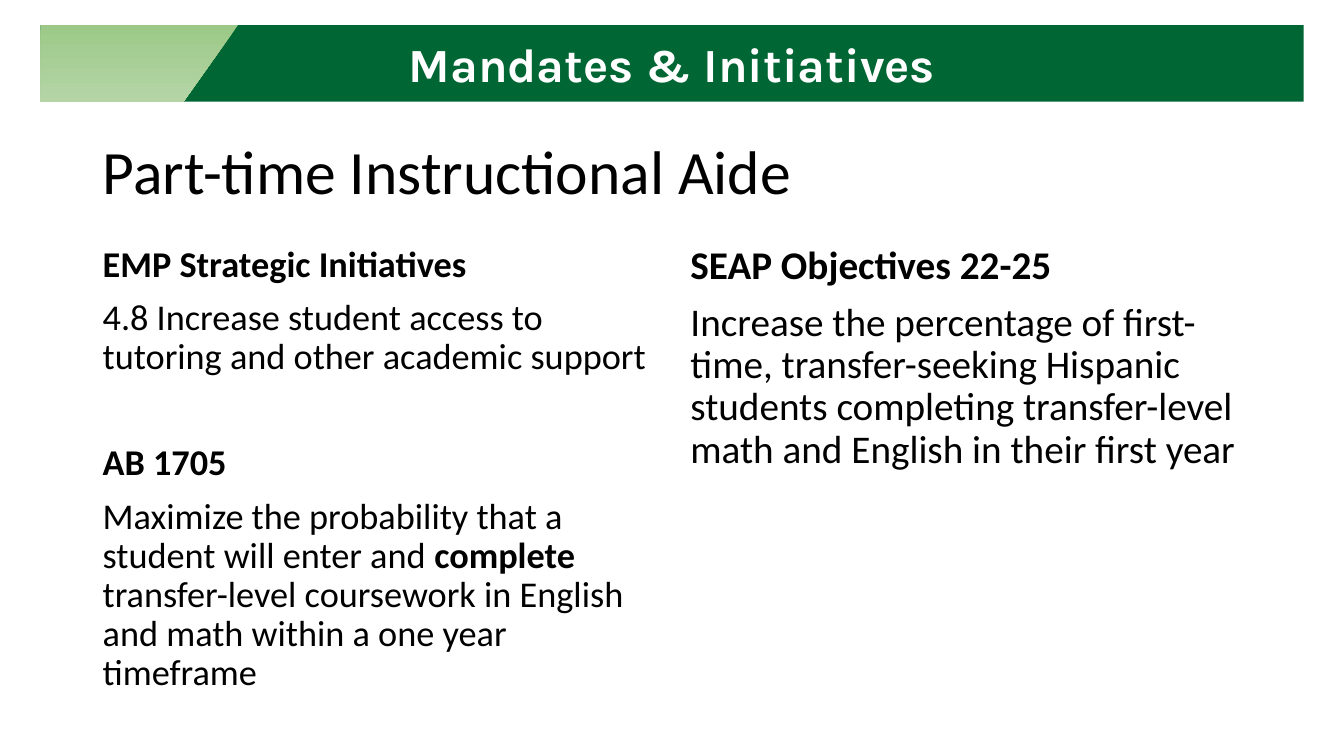
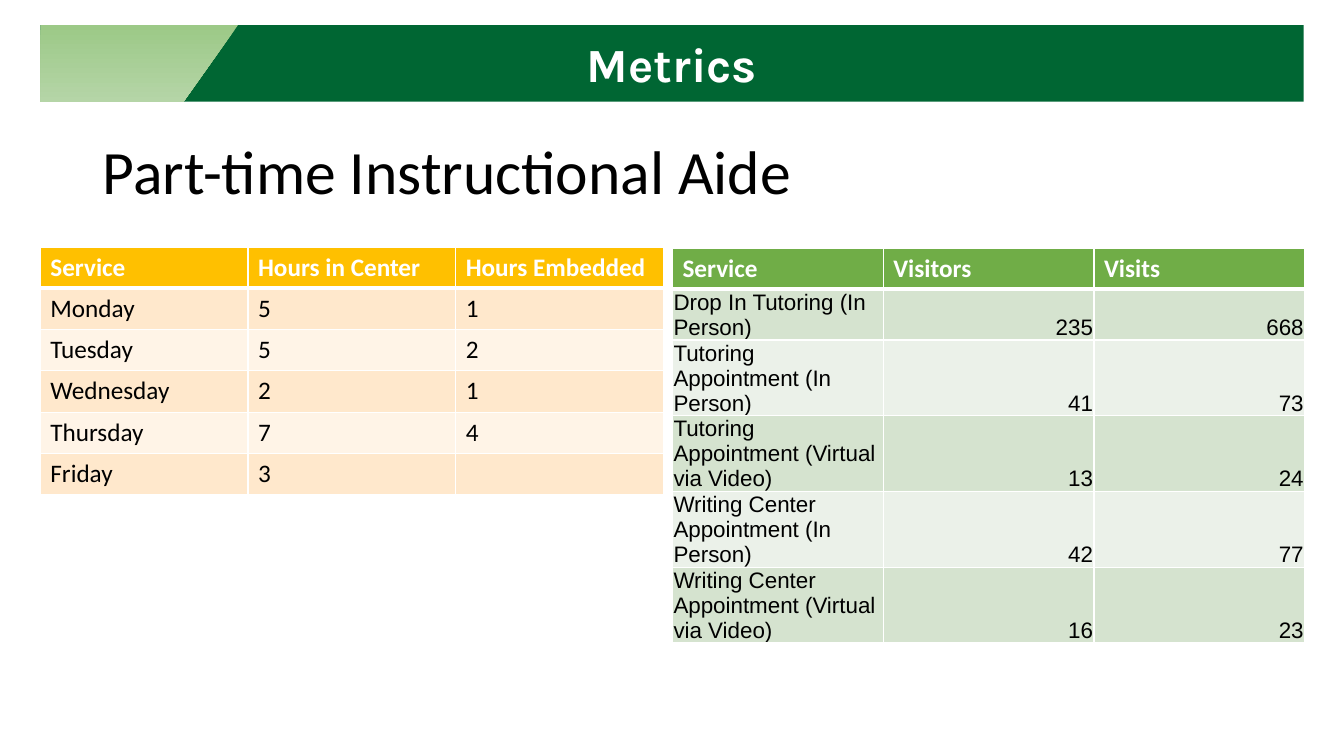
from lxml.etree import SubElement
from pptx import Presentation
from pptx.dml.color import RGBColor
from pptx.enum.shapes import MSO_SHAPE as Preset
from pptx.enum.text import MSO_ANCHOR as Anchor, MSO_AUTO_SIZE as AutoSize, PP_ALIGN as Align
from pptx.oxml.ns import qn
from pptx.util import Emu, Pt

WHITE = RGBColor(0xFF, 0xFF, 0xFF)
BLACK = RGBColor(0x00, 0x00, 0x00)
GREEN = RGBColor(0x00, 0x66, 0x33)
ACCENT_TOP = RGBColor(0x9C, 0xC9, 0x87)
ACCENT_BOTTOM = RGBColor(0xB5, 0xD5, 0xA7)
AMBER_HEAD = RGBColor(0xFF, 0xC0, 0x00)
AMBER_BANDS = RGBColor(0xFF, 0xE8, 0xCC), RGBColor(0xFF, 0xF4, 0xE7)
LEAF_HEAD = RGBColor(0x70, 0xAD, 0x47)
LEAF_BANDS = RGBColor(0xD5, 0xE3, 0xCF), RGBColor(0xEB, 0xF1, 0xE9)


def px(length):
    return Emu(length * 9144)


class Deck:
    """Holds the shared style and the slide being built."""

    BODY_FONT, BAND_FONT, DATA_FONT = "Calibri", "Karla", "Arial"
    LEFT, BAND_TOP, BAND_WIDTH, BAND_HEIGHT = 40, 25, 1253, 76

    def __init__(self):
        self.deck = Presentation()
        self.deck.slide_width, self.deck.slide_height = px(1333), px(750)
        self.slide = None

    def add_run(self, paragraph, text, size, color=BLACK, bold=False, font=BODY_FONT):
        run = paragraph.add_run()
        run.text = text
        run.font.name, run.font.size, run.font.bold = font, Pt(size), bold
        run.font.color.rgb = color

    def start(self, heading, title):
        self.slide = self.deck.slides.add_slide(self.deck.slide_layouts[5])
        self.title(title)
        self.band(heading)
        self.accent()

    def title(self, text):
        holder = self.slide.shapes.title
        holder.left, holder.top, holder.width, holder.height = map(px, (92, 101, 1150, 145))
        frame = holder.text_frame
        frame.word_wrap, frame.auto_size = True, AutoSize.NONE
        frame.vertical_anchor = Anchor.MIDDLE
        line = frame.paragraphs[0]
        line.alignment, line.line_spacing = Align.LEFT, 0.9
        self.add_run(line, text, 44)

    def band(self, heading):
        bounds = map(px, (self.LEFT, self.BAND_TOP, self.BAND_WIDTH, self.BAND_HEIGHT))
        band = self.slide.shapes.add_shape(Preset.RECTANGLE, *bounds)
        band.shadow.inherit = False
        band.fill.solid()
        band.fill.fore_color.rgb = GREEN
        band.line.fill.background()
        band.text_frame.vertical_anchor = Anchor.MIDDLE
        line = band.text_frame.paragraphs[0]
        line.alignment = Align.CENTER
        self.add_run(line, heading, 34, WHITE, True, self.BAND_FONT)

    def accent(self):
        bottom = self.BAND_TOP + self.BAND_HEIGHT
        outline = self.slide.shapes.build_freeform(self.LEFT, bottom, scale=px(1))
        outline.add_line_segments([(182, bottom), (236, self.BAND_TOP), (self.LEFT, self.BAND_TOP)])
        accent = outline.convert_to_shape()
        accent.shadow.inherit = False
        accent.line.fill.background()
        accent.fill.gradient()
        accent.fill.gradient_angle = 270
        for stop, color in zip(accent.fill.gradient_stops, (ACCENT_TOP, ACCENT_BOTTOM)):
            stop.color.rgb = color

    def column(self, left, size, sections):
        box = self.slide.shapes.add_textbox(px(left), px(239), px(567), px(476))
        frame = box.text_frame
        frame.word_wrap = True
        line = frame.paragraphs[0]
        for number, (heading, body) in enumerate(sections):
            if number:
                line = frame.add_paragraph()
            line.line_spacing, line.space_before = 0.9, Pt(48 if number else 10)
            self.add_run(line, heading, size, bold=True)
            line = frame.add_paragraph()
            line.line_spacing, line.space_before = 0.9, Pt(10)
            for text, bold in body:
                self.add_run(line, text, size, bold=bold)

    def borders(self, cell, row):
        properties = cell._tc.get_or_add_tcPr()
        for position, edge in enumerate(("lnL", "lnR", "lnT", "lnB")):
            under_header = (row, edge) in ((0, "lnB"), (1, "lnT"))
            line = SubElement(properties, qn(f"a:{edge}"), w=str(Pt(3 if under_header else 1)))
            SubElement(SubElement(line, qn("a:solidFill")), qn("a:srgbClr"), val=str(WHITE))
            properties.insert(position, line)

    def table(self, left, top, column_width, rows, head, bands, compact=False):
        row_height, columns = 41, len(rows[0])
        bounds = map(px, (left, top, column_width * columns, row_height * len(rows)))
        table = self.slide.shapes.add_table(len(rows), columns, *bounds).table
        for row, texts in enumerate(rows):
            for column, text in enumerate(texts):
                cell = table.cell(row, column)
                cell.fill.solid()
                cell.fill.fore_color.rgb = bands[(row - 1) % 2] if row else head
                self.borders(cell, row)
                line = cell.text_frame.paragraphs[0]
                tight = compact and row > 0
                if tight:
                    cell.vertical_anchor = Anchor.BOTTOM
                    cell.margin_left = cell.margin_right = cell.margin_top = px(1)
                    cell.margin_bottom = 0
                    line.alignment = Align.RIGHT if column else Align.LEFT
                if text:
                    self.add_run(line, text, 16 if tight else 18, BLACK if row else WHITE,
                                 row == 0, self.DATA_FONT if tight else self.BODY_FONT)


def main():
    deck = Deck()
    position = "Part-time Instructional Aide"

    deck.start("Mandates & Initiatives", position)
    deck.column(92, 25.9, [
        ("EMP Strategic Initiatives",
         [("4.8 Increase student access to tutoring and other academic support", False)]),
        ("AB 1705",
         [("Maximize the probability that a student will enter and ", False),
          ("complete", True),
          (" transfer-level coursework in English and math within a one year timeframe", False)]),
    ])
    deck.column(675, 28, [
        ("SEAP Objectives 22-25",
         [("Increase the percentage of first-time, transfer-seeking Hispanic students "
           "completing transfer-level math and English in their first year", False)]),
    ])

    deck.start("Metrics", position)
    weekly_hours = [
        ("Service", "Hours in Center", "Hours Embedded"),
        ("Monday", "5", "1"),
        ("Tuesday", "5", "2"),
        ("Wednesday", "2", "1"),
        ("Thursday", "7", "4"),
        ("Friday", "3", ""),
    ]
    attendance = [
        ("Service", "Visitors", "Visits"),
        ("Drop In Tutoring (In Person)", "235", "668"),
        ("Tutoring Appointment (In Person)", "41", "73"),
        ("Tutoring Appointment (Virtual via Video)", "13", "24"),
        ("Writing Center Appointment (In Person)", "42", "77"),
        ("Writing Center Appointment (Virtual via Video)", "16", "23"),
    ]
    deck.table(40, 245, 206, weekly_hours, AMBER_HEAD, AMBER_BANDS)
    deck.table(667, 246, 209, attendance, LEAF_HEAD, LEAF_BANDS, compact=True)

    deck.deck.save("out.pptx")


if __name__ == "__main__":
    main()
